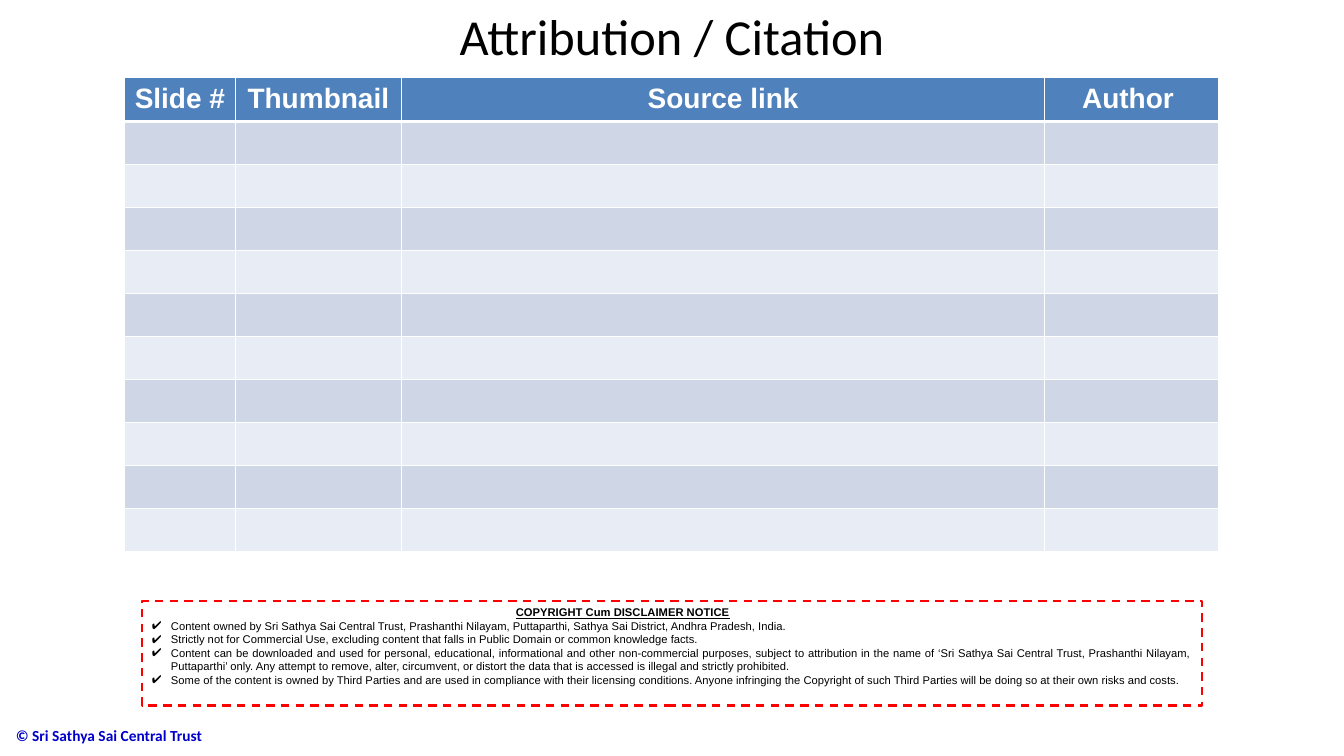
from lxml import etree
from pptx import Presentation
from pptx.dml.color import RGBColor
from pptx.enum.dml import MSO_LINE
from pptx.enum.shapes import MSO_SHAPE
from pptx.enum.text import MSO_ANCHOR, PP_ALIGN
from pptx.oxml.ns import qn
from pptx.util import Cm, Pt

CENTER, JUSTIFY, LEFT = PP_ALIGN.CENTER, PP_ALIGN.JUSTIFY, PP_ALIGN.LEFT
TOP, MIDDLE = MSO_ANCHOR.TOP, MSO_ANCHOR.MIDDLE
RECTANGLE = MSO_SHAPE.RECTANGLE
DASH = MSO_LINE.DASH

BLACK = RGBColor(0x00, 0x00, 0x00)
WHITE = RGBColor(0xFF, 0xFF, 0xFF)
RED = RGBColor(0xFF, 0x00, 0x00)
FOOTER_BLUE = RGBColor(0x00, 0x00, 0xCC)
HEADER_BLUE = RGBColor(0x4F, 0x81, 0xBD)
BANDS = (RGBColor(0xCF, 0xD7, 0xE7), RGBColor(0xE8, 0xEC, 0xF4))

COLUMNS = (("Slide #", 2.79), ("Thumbnail", 4.19), ("Source link", 16.21), ("Author ", 4.39))
EMPTY_ROWS = 10

NOTICE_HEADING = "COPYRIGHT Cum DISCLAIMER NOTICE"
NOTICE_ITEMS = (
    "Content owned by Sri Sathya Sai Central Trust, Prashanthi Nilayam, Puttaparthi, "
    "Sathya Sai District, Andhra Pradesh, India. ",
    "Strictly not for Commercial Use, excluding content that falls in Public Domain "
    "or common knowledge facts.",
    "Content can be downloaded and used for personal, educational, informational and other "
    "non-commercial purposes, subject to attribution in the name of ‘Sri Sathya Sai Central "
    "Trust, Prashanthi Nilayam, Puttaparthi’ only. Any attempt to remove, alter, circumvent, "
    "or distort the data that is accessed is illegal and strictly prohibited.",
    "Some of the content is owned by Third Parties and are used in compliance with their "
    "licensing conditions. Anyone infringing the Copyright of such Third Parties will be "
    "doing so at their own risks and costs.",
)


def add_run(paragraph, text, font_name, size, color, bold=False, underline=False):
    run = paragraph.add_run()
    run.text = text
    run.font.name = font_name
    run.font.size = Pt(size)
    run.font.color.rgb = color
    run.font.bold = bold
    run.font.underline = underline


def add_line_of_text(slide, box, text, size, color, alignment, anchor, bold=False):
    frame = slide.shapes.add_textbox(*box).text_frame
    frame.word_wrap = True
    frame.vertical_anchor = anchor
    paragraph = frame.paragraphs[0]
    paragraph.alignment = alignment
    add_run(paragraph, text, "Calibri", size, color, bold)


def add_borders(cell, bottom_width):
    properties = cell._tc.get_or_add_tcPr()
    for side, width in (("L", 1), ("R", 1), ("T", 1), ("B", bottom_width)):
        line = etree.SubElement(properties, qn(f"a:ln{side}"), w=str(Pt(width)))
        fill = etree.SubElement(line, qn("a:solidFill"))
        etree.SubElement(fill, qn("a:srgbClr"), val=str(WHITE))


def add_citation_table(slide, box):
    left, top, width, height = box
    row_count = EMPTY_ROWS + 1
    table = slide.shapes.add_table(row_count, len(COLUMNS), left, top, width, height).table
    for column, (heading, column_width) in enumerate(COLUMNS):
        table.columns[column].width = Cm(column_width)
        paragraph = table.cell(0, column).text_frame.paragraphs[0]
        paragraph.alignment = CENTER
        add_run(paragraph, heading, "Arial", 20, WHITE, bold=True)
        for row in range(row_count):
            cell = table.cell(row, column)
            add_borders(cell, 1 if row else 3)
            cell.fill.solid()
            cell.fill.fore_color.rgb = BANDS[(row - 1) % 2] if row else HEADER_BLUE


def add_check_mark(paragraph):
    properties = paragraph._p.get_or_add_pPr()
    indent = Cm(0.48)
    properties.set("marL", str(indent))
    properties.set("indent", str(-indent))
    color = etree.SubElement(properties, qn("a:buClr"))
    etree.SubElement(color, qn("a:srgbClr"), val=str(BLACK))
    etree.SubElement(properties, qn("a:buFont"), typeface="Arial")
    etree.SubElement(properties, qn("a:buChar"), char="✔")


def add_notice(slide, box):
    shape = slide.shapes.add_shape(RECTANGLE, *box)
    shape.shadow.inherit = False
    shape.fill.background()
    shape.line.color.rgb = RED
    shape.line.width = Pt(1.5)
    shape.line.dash_style = DASH
    frame = shape.text_frame
    frame.word_wrap = True
    frame.vertical_anchor = TOP
    heading = frame.paragraphs[0]
    heading.alignment = LEFT
    heading._p.get_or_add_pPr().set("marL", str(Cm(9.17)))
    add_run(heading, NOTICE_HEADING, "Arial", 8, BLACK, bold=True, underline=True)
    for item in NOTICE_ITEMS:
        paragraph = frame.add_paragraph()
        paragraph.alignment = JUSTIFY
        add_check_mark(paragraph)
        add_run(paragraph, item, "Arial", 8, BLACK)


def main():
    presentation = Presentation()
    presentation.slide_width = Cm(33.87)
    presentation.slide_height = Cm(19.05)
    slide = presentation.slides.add_slide(presentation.slide_layouts[6])
    add_line_of_text(slide, (Cm(0.15), Cm(18.03), Cm(8.97), Cm(1.04 - 0.04)),
                     "© Sri Sathya Sai Central Trust", 11, FOOTER_BLUE, LEFT, MIDDLE, bold=True)
    add_citation_table(slide, (Cm(3.14), Cm(1.96), Cm(27.58), Cm(11.92)))
    add_line_of_text(slide, (Cm(9.86), Cm(0), Cm(14.15), Cm(1.4)),
                     "Attribution / Citation", 36, BLACK, CENTER, TOP)
    add_notice(slide, (Cm(3.58), Cm(15.14), Cm(26.72), Cm(2.64)))
    presentation.save("out.pptx")


if __name__ == "__main__":
    main()
